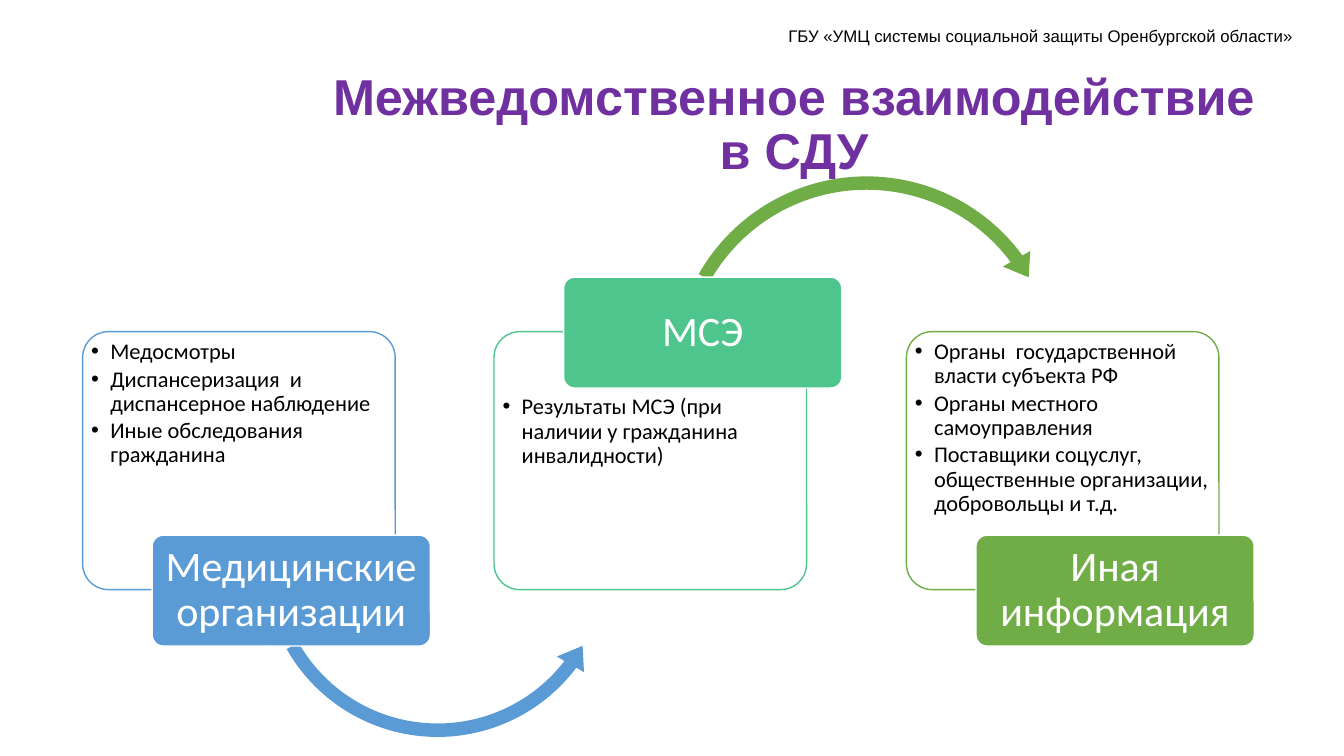
import pptx
import pptx.util
import pptx.dml.color
import pptx.enum.shapes
import pptx.enum.text
from lxml import etree

Inches, Pt = pptx.util.Inches, pptx.util.Pt
KIND = pptx.enum.shapes.MSO_SHAPE
ALIGN = pptx.enum.text.PP_ALIGN
ANCHOR = pptx.enum.text.MSO_ANCHOR
NS = "{http://schemas.openxmlformats.org/drawingml/2006/main}"

COLORS = {
    "black": "000000", "white": "FFFFFF", "purple": "7030A0",
    "blue": "5B9BD5", "teal": "4DC58D", "green": "70AD47",
}

deck = pptx.Presentation()
deck.slide_width, deck.slide_height = Inches(13.33), Inches(7.5)
slide = deck.slides.add_slide(deck.slide_layouts[6])


def add_form(kind, box, fill, line=None):
    form = slide.shapes.add_shape(kind, *map(Inches, box))
    form.shadow.inherit = False
    form.fill.solid()
    form.fill.fore_color.rgb = pptx.dml.color.RGBColor.from_string(COLORS[fill])
    if line:
        form.line.color.rgb = pptx.dml.color.RGBColor.from_string(COLORS[line])
        form.line.width = Pt(1)
    else:
        form.line.fill.background()
    return form


def set_text(shape, text, pads, size, face, color, align, anchor, after=0, bullet=False):
    """Fill a shape with text; pads are left, top, right and bottom in inches."""
    frame = shape.text_frame
    frame.word_wrap = True
    frame.vertical_anchor = anchor
    (frame.margin_left, frame.margin_top,
     frame.margin_right, frame.margin_bottom) = map(Inches, pads)
    frame.text = text
    for para in frame.paragraphs:
        if bullet:
            props = para._p.get_or_add_pPr()
            props.set("marL", str(Inches(0.19)))
            props.set("indent", str(-Inches(0.19)))
            etree.SubElement(props, NS + "buFont", typeface="Arial")
            etree.SubElement(props, NS + "buChar", char="•")
        para.alignment = align
        para.line_spacing = 0.9
        para.space_after = Pt(after)
        for run in para.runs:
            run.font.size = Pt(size)
            run.font.name = face
            run.font.color.rgb = pptx.dml.color.RGBColor.from_string(COLORS[color])


pads = (0.1, 0.05, 0.1, 0.05)
owner = slide.shapes.add_textbox(*map(Inches, (7.72, 0.21, 5.38, 0.3)))
set_text(owner, "ГБУ «УМЦ системы социальной защиты Оренбургской области»",
         pads, 12, "Arial", "black", ALIGN.LEFT, ANCHOR.TOP)
owner.text_frame.paragraphs[0].line_spacing = 1.0

title = slide.shapes.add_textbox(*map(Inches, (3.04, 0.65, 9.67, 1.2)))
set_text(title, "Межведомственное взаимодействие в СДУ",
         pads, 36, "Arial", "purple", ALIGN.CENTER, ANCHOR.MIDDLE)
title.text_frame.paragraphs[0].runs[0].font.bold = True

# left edge, colour, label, label top, top inset of the list, list items
steps = [
    (0.82, "blue", "Медицинские организации", 5.31, 0.01,
     ["Медосмотры", "Диспансеризация  и диспансерное наблюдение",
      "Иные обследования гражданина"]),
    (4.9, "teal", "МСЭ", 2.75, 0.56,
     ["Результаты МСЭ (при наличии у гражданина инвалидности)"]),
    (8.99, "green", "Иная информация", 5.31, 0.01,
     ["Органы  государственной власти субъекта РФ",
      "Органы местного самоуправления",
      "Поставщики соцуслуг, общественные организации, добровольцы и т.д."]),
]
# arrow that leaves each label: kind, box, colour, adjustments
arrows = {
    "Медицинские организации": (
        KIND.LEFT_CIRCULAR_ARROW, (2.53, 3.78, 3.62, 3.62), "blue",
        (0.037, 4.585, 22.34, 90.245, 0.043)),
    "МСЭ": (
        KIND.CIRCULAR_ARROW, (6.59, 1.66, 4.01, 4.01), "green",
        (0.033, 4.096, 194.149, 125.755, 0.039)),
}

for left, color, name, top, inset, items in steps:
    card = add_form(KIND.ROUNDED_RECTANGLE, (left, 3.29, 3.1, 2.56), "white", color)
    card.adjustments[0] = 0.1
    tint = card.fill._xPr.find(f"{NS}solidFill/{NS}srgbClr")
    etree.SubElement(tint, NS + "alpha", val="90000")
    set_text(card, "\n".join(items), (0.01, inset, 0.01, 0.01), 16, "Calibri",
             "black", ALIGN.LEFT, ANCHOR.TOP, after=2.4, bullet=True)

    if name in arrows:
        kind, box, shade, bends = arrows[name]
        arrow = add_form(kind, box, shade)
        for place, bend in enumerate(bends):
            arrow.adjustments[place] = bend

    label = add_form(KIND.ROUNDED_RECTANGLE, (left + 0.69, top, 2.76, 1.1), color, "white")
    label.adjustments[0] = 0.1
    set_text(label, name, (0.06, 0.04, 0.06, 0.04), 30, "Calibri",
             "white", ALIGN.CENTER, ANCHOR.MIDDLE)

deck.save("out.pptx")
